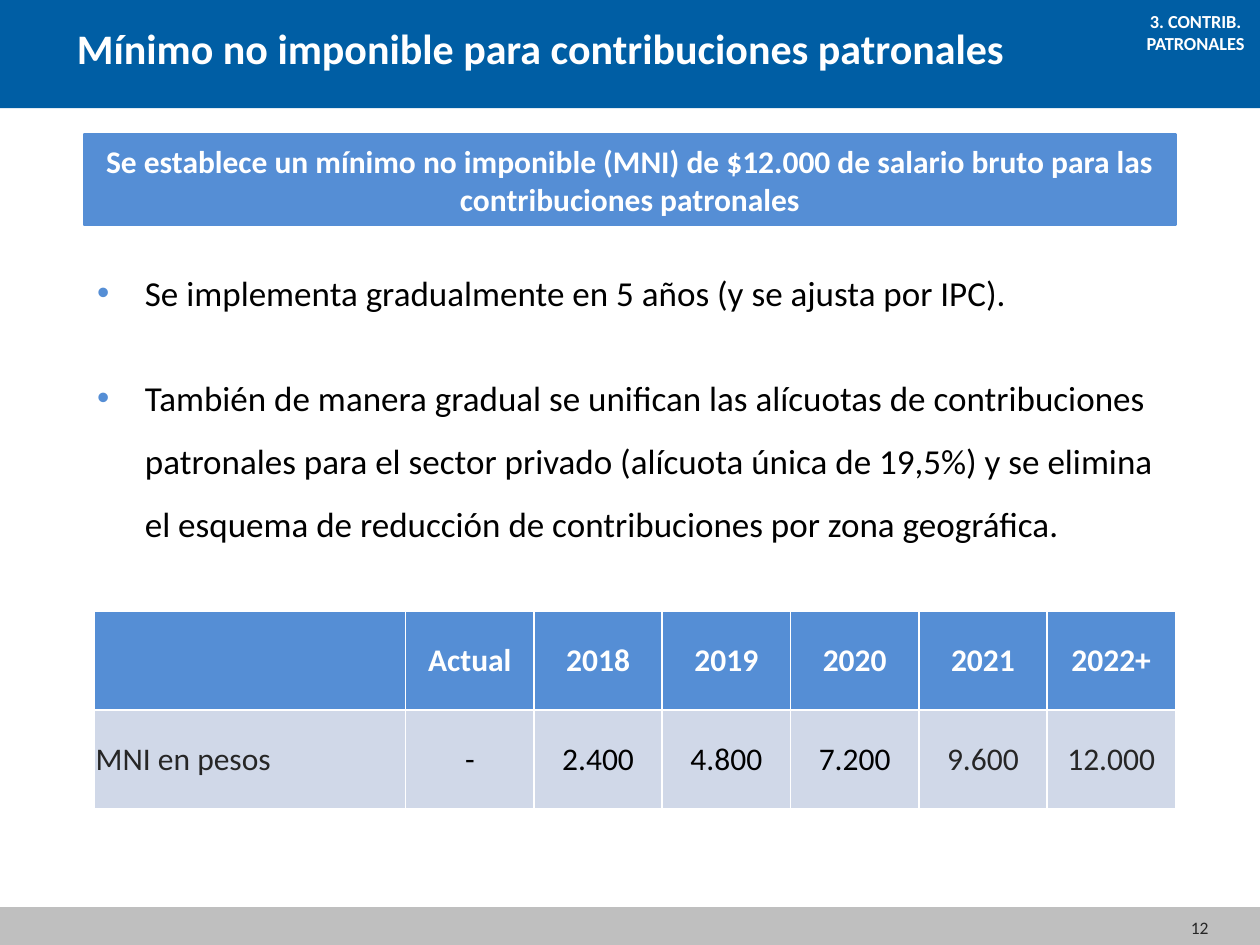
from lxml import etree
from pptx import Presentation
from pptx.dml.color import RGBColor
from pptx.enum.shapes import MSO_SHAPE
from pptx.enum.text import MSO_ANCHOR, MSO_AUTO_SIZE, PP_ALIGN
from pptx.oxml.ns import qn
from pptx.util import Inches, Pt

RECTANGLE = MSO_SHAPE.RECTANGLE
TOP, MIDDLE = MSO_ANCHOR.TOP, MSO_ANCHOR.MIDDLE
LEFT, CENTER, RIGHT = PP_ALIGN.LEFT, PP_ALIGN.CENTER, PP_ALIGN.RIGHT
NO_AUTOFIT = MSO_AUTO_SIZE.NONE
COLUMNS, ROWS = 100, 75
FONT = "Calibri"
COLORS = {
    "band": "005EA4",
    "accent": "558ED5",
    "footer": "BFBFBF",
    "row": "D0D8E8",
    "white": "FFFFFF",
    "black": "000000",
    "dark": "262626",
}


def color(name):
    return RGBColor.from_string(COLORS[name])


def write(frame, *lines, size=18, ink="black", bold=False, align=LEFT,
          anchor=TOP, spacing=1.0, after=0):
    frame.word_wrap = True
    frame.vertical_anchor = anchor
    for index, line in enumerate(lines):
        paragraph = frame.paragraphs[0] if index == 0 else frame.add_paragraph()
        paragraph.alignment = align
        paragraph.line_spacing = spacing
        paragraph.space_before = Pt(0)
        paragraph.space_after = Pt(after)
        run = paragraph.add_run()
        run.text = line
        run.font.name = FONT
        run.font.size = Pt(size)
        run.font.bold = bold
        run.font.color.rgb = color(ink)


def add_solid_fill(parent, name):
    fill = etree.SubElement(parent, qn("a:solidFill"))
    etree.SubElement(fill, qn("a:srgbClr"), val=COLORS[name])


class SlideBuilder:
    def __init__(self, deck):
        self.column = deck.slide_width / COLUMNS
        self.row = deck.slide_height / ROWS
        self.slide = deck.slides.add_slide(deck.slide_layouts[1])

    def place(self, left, top, width, height):
        return (round(left * self.column), round(top * self.row),
                round(width * self.column), round(height * self.row))

    def placeholder(self, index, area, *lines, **style):
        holder = self.slide.placeholders[index]
        holder.left, holder.top, holder.width, holder.height = self.place(*area)
        tree = holder.element.getparent()
        tree.remove(holder.element)
        tree.append(holder.element)
        holder.text_frame.auto_size = NO_AUTOFIT
        write(holder.text_frame, *lines, **style)
        return holder

    def bullets(self, area, *lines, **style):
        body = self.placeholder(1, area, *lines, **style)
        for paragraph in body.text_frame.paragraphs:
            properties = paragraph._p.get_or_add_pPr()
            properties.set("marL", str(Inches(0.38)))
            properties.set("indent", str(-Inches(0.38)))
            bullet_color = etree.SubElement(properties, qn("a:buClr"))
            etree.SubElement(bullet_color, qn("a:srgbClr"), val=COLORS["accent"])
            etree.SubElement(properties, qn("a:buFont"), typeface="Arial")
            etree.SubElement(properties, qn("a:buChar"), char="•")

    def bar(self, area, fill, *lines, outlined=True, **style):
        bar = self.slide.shapes.add_shape(RECTANGLE, *self.place(*area))
        bar.shadow.inherit = False
        bar.fill.solid()
        bar.fill.fore_color.rgb = color(fill)
        if outlined:
            bar.line.color.rgb = color(fill)
            bar.line.width = Pt(2)
        else:
            bar.line.fill.background()
        write(bar.text_frame, *lines, **style)

    def label(self, area, *lines, **style):
        box = self.slide.shapes.add_textbox(*self.place(*area))
        write(box.text_frame, *lines, **style)

    def cell(self, cell, text, fill, **style):
        cell.margin_left = cell.margin_top = cell.margin_right = Inches(0.01)
        cell.margin_bottom = 0
        cell.vertical_anchor = MIDDLE
        if text:
            write(cell.text_frame, text, anchor=None, **style)
        properties = cell._tc.get_or_add_tcPr()
        for side in ("a:lnL", "a:lnR", "a:lnT", "a:lnB"):
            add_solid_fill(etree.SubElement(properties, qn(side), w=str(Pt(1))), "white")
        cell.fill.solid()
        cell.fill.fore_color.rgb = color(fill)

    def table(self, area, first_width, header, values, dark_columns):
        place = self.place(*area)
        table = self.slide.shapes.add_table(2, len(header), *place).table
        year_width = (area[2] - first_width) / (len(header) - 1)
        for index, (heading, value) in enumerate(zip(header, values)):
            width = year_width if index else first_width
            table.columns[index].width = round(width * self.column)
            self.cell(table.cell(0, index), heading, "accent",
                      ink="white", bold=True, align=CENTER)
            self.cell(table.cell(1, index), value, "row",
                      ink="dark" if index in dark_columns else "black",
                      align=CENTER if index else LEFT)


def main():
    deck = Presentation()
    deck.slide_width, deck.slide_height = Inches(10), Inches(7.5)
    builder = SlideBuilder(deck)
    margin, content = 6.7, 86.6

    builder.bar((0, 0, COLUMNS, 8.6), "band", outlined=False)
    builder.bar((0, 72.1, COLUMNS, 2.9), "footer")
    builder.label((73.6, 71.6, 23.3, 4), "12", size=10, ink="dark",
                  align=RIGHT, anchor=MIDDLE)
    builder.placeholder(0, (5.1, 1.3, content, 5),
                        "Mínimo no imponible para contribuciones patronales",
                        size=24, ink="white", bold=True)
    builder.bar((margin, 10.7, content, 7.1), "accent",
                "Se establece un mínimo no imponible (MNI) de $12.000 de salario "
                "bruto para las contribuciones patronales",
                ink="white", bold=True, align=CENTER, anchor=MIDDLE)
    builder.bullets((margin, 19.4, content, 24.6),
                    "Se implementa gradualmente en 5 años (y se ajusta por IPC).",
                    "También de manera gradual se unifican las alícuotas de "
                    "contribuciones patronales para el sector privado (alícuota "
                    "única de 19,5%) y se elimina el esquema de reducción de "
                    "contribuciones por zona geográfica.",
                    size=20, spacing=1.5, after=24)
    builder.label((88.6, 0.3, 12.6, 4.5), "3. CONTRIB.", "PATRONALES",
                  size=10.5, ink="white", bold=True, align=CENTER)
    builder.table((7.5, 48.5, 85.8, 15.7), 24.7,
                  ("", "Actual", "2018", "2019", "2020", "2021", "2022+"),
                  ("MNI en pesos", "-", "2.400", "4.800", "7.200", "9.600", "12.000"),
                  dark_columns=(0, 5, 6))
    deck.save("out.pptx")


if __name__ == "__main__":
    main()
